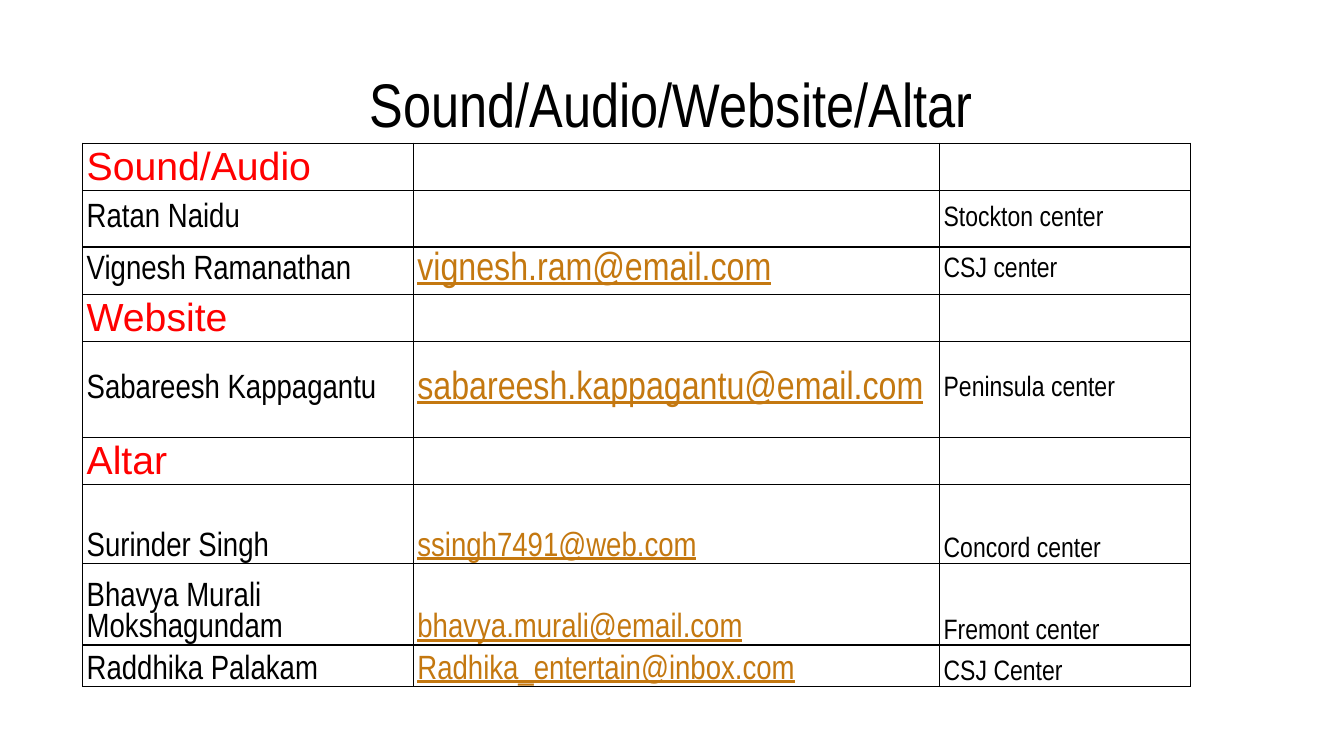
from lxml import etree
from pptx import Presentation
from pptx import util as u
from pptx.dml import color
from pptx.enum import text
from pptx.oxml import ns

PX = 9144
BLACK, RED, LINK = "000000", "FF0000", "C47810"
MIDDLE, BOTTOM = text.MSO_ANCHOR.MIDDLE, text.MSO_ANCHOR.BOTTOM

TITLE = {"name": "Arial Narrow", "size": u.Pt(44), "color": BLACK}
HEADING = {"name": "Arial", "size": u.Pt(28), "color": RED}
PERSON = {"name": "Arial Narrow", "size": u.Pt(24), "color": BLACK}
CENTER = {**PERSON, "size": u.Pt(20)}
EMAIL = {**PERSON, "color": LINK, "underline": True}
LARGE_EMAIL = {**EMAIL, "size": u.Pt(28)}

COLUMN_WIDTHS = [328, 522, 249]
CONTACT_ROWS = [
    (47, MIDDLE, [("Sound/Audio", HEADING)]),
    (56, MIDDLE, [("Ratan Naidu", PERSON), ("", EMAIL), ("Stockton center", CENTER)]),
    (47, MIDDLE, [("Vignesh Ramanathan", PERSON), ("vignesh.ram@email.com", LARGE_EMAIL),
                  ("CSJ center", CENTER)]),
    (47, MIDDLE, [("Website", HEADING)]),
    (95, MIDDLE, [("Sabareesh Kappagantu", PERSON),
                  ("sabareesh.kappagantu@email.com", LARGE_EMAIL),
                  ("Peninsula center", CENTER)]),
    (47, MIDDLE, [("Altar", HEADING)]),
    (78, BOTTOM, [("Surinder Singh", PERSON), ("ssingh7491@web.com", EMAIL),
                  ("Concord center", CENTER)]),
    (81, BOTTOM, [("Bhavya Murali Mokshagundam", PERSON), ("bhavya.murali@email.com", EMAIL),
                  ("Fremont center", CENTER)]),
    (41, BOTTOM, [("Raddhika Palakam", PERSON), ("Radhika_entertain@inbox.com", EMAIL),
                  ("CSJ Center", CENTER)]),
]


def px(length):
    """Turn a pixel length into EMU."""
    return u.Emu(length * PX)


def rgb(value):
    """Turn a hex string into a colour."""
    return color.RGBColor.from_string(value)


def set_font(font, style):
    """Apply a dict of format values to a font."""
    for name, value in style.items():
        if name == "color":
            font.color.rgb = rgb(value)
        else:
            setattr(font, name, value)


def add_borders(cell):
    """Draw a one-point black line on every side of a cell."""
    properties = cell._tc.get_or_add_tcPr()
    for index, side in enumerate(["lnL", "lnR", "lnT", "lnB"]):
        line = etree.Element(ns.qn(f"a:{side}"), w=str(u.Pt(1)))
        fill = etree.SubElement(line, ns.qn("a:solidFill"))
        etree.SubElement(fill, ns.qn("a:srgbClr"), val=BLACK)
        properties.insert(index, line)


def place_title(slide, left, top, width, height):
    """Move and format the title placeholder."""
    title = slide.shapes.title
    title.left, title.top, title.width, title.height = map(px, (left, top, width, height))
    frame = title.text_frame
    frame.text = "Sound/Audio/Website/Altar"
    frame.vertical_anchor = MIDDLE
    paragraph = frame.paragraphs[0]
    paragraph.alignment = text.PP_ALIGN.CENTER
    set_font(paragraph.runs[0].font, TITLE)


def format_cell(cell, anchor):
    """Set the insets, anchor, fill and borders of a cell."""
    layout = {"margin_left": px(4), "margin_right": px(4), "margin_top": 0,
              "margin_bottom": 0, "vertical_anchor": anchor}
    for name, value in layout.items():
        setattr(cell, name, value)
    cell.fill.background()
    add_borders(cell)


def add_contacts(slide, left, top):
    """Build the contact table from its top left corner."""
    width, height = sum(COLUMN_WIDTHS), sum(row[0] for row in CONTACT_ROWS)
    table = slide.shapes.add_table(len(CONTACT_ROWS), len(COLUMN_WIDTHS),
                                   *map(px, (left, top, width, height))).table
    table.first_row = table.horz_banding = False
    for column, column_width in zip(table.columns, COLUMN_WIDTHS):
        column.width = px(column_width)
    for row, (row_height, anchor, entries) in zip(table.rows, CONTACT_ROWS):
        row.height = px(row_height)
        for cell in row.cells:
            format_cell(cell, anchor)
        for cell, (wording, style) in zip(row.cells, entries):
            if wording:
                cell.text = wording
                set_font(cell.text_frame.paragraphs[0].runs[0].font, style)


def main():
    """Build and save the presentation."""
    presentation = Presentation()
    presentation.slide_width, presentation.slide_height = px(1333), px(750)
    slide = presentation.slides.add_slide(presentation.slide_layouts[5])
    place_title(slide, 133, 55, 1066, 95)
    add_contacts(slide, 82, 142)
    presentation.save("out.pptx")


if __name__ == "__main__":
    main()
